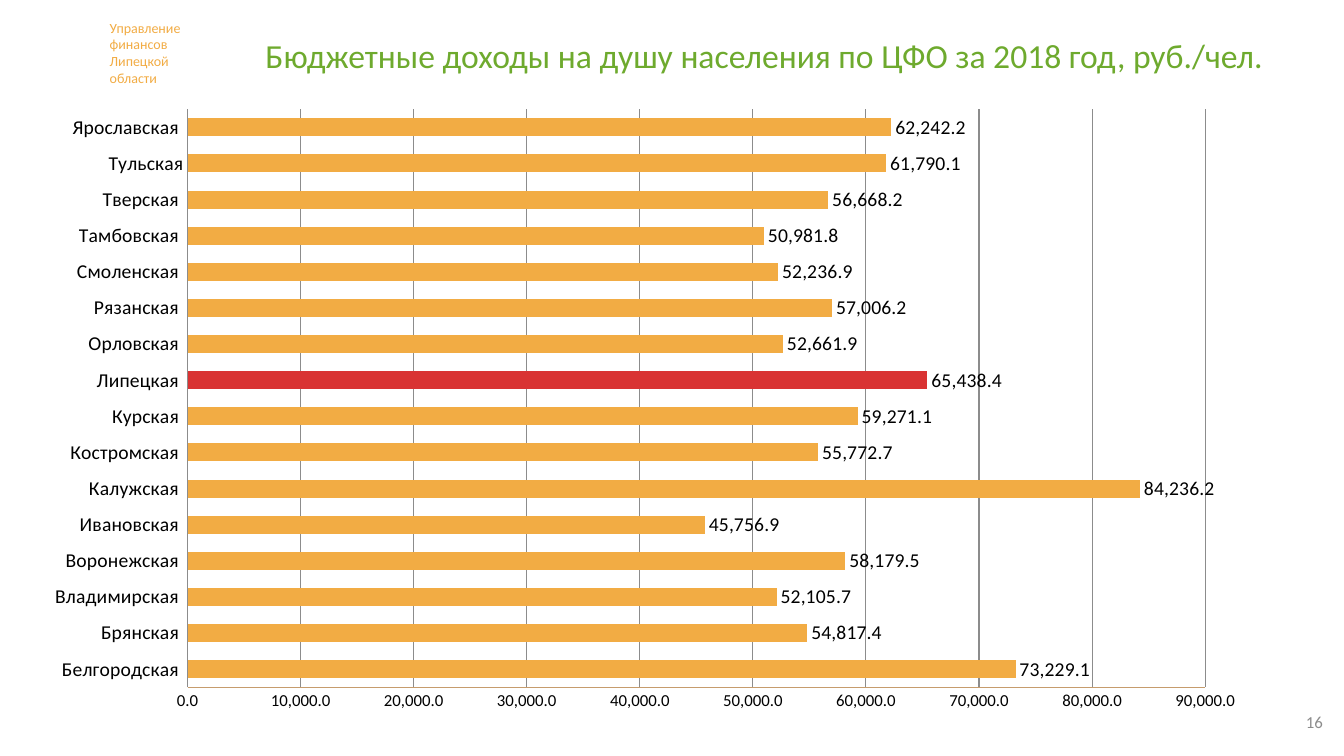
from dataclasses import dataclass

from lxml.etree import SubElement
from pptx import Presentation
from pptx.chart.data import CategoryChartData
from pptx.dml.color import RGBColor
from pptx.enum.chart import XL_CHART_TYPE, XL_LABEL_POSITION, XL_TICK_MARK
from pptx.enum.text import MSO_ANCHOR, PP_ALIGN
from pptx.oxml.ns import qn
from pptx.slide import Slide
from pptx.util import Emu, Pt

EMU_PER_PX = 9144  # 100 px to the inch


@dataclass(frozen=True)
class Theme:
    font: str = "Calibri"
    orange: str = "F2AC44"
    green: str = "6EAA2E"
    red: str = "D93333"
    black: str = "000000"
    grey: str = "8C8C8C"
    axis_brown: str = "C69C6D"
    caption_size: int = 10
    small_size: int = 12
    label_size: int = 14
    title_size: int = 24


@dataclass(frozen=True)
class Box:
    left: int
    top: int
    width: int
    height: int

    def emu(self) -> tuple[Emu, ...]:
        sides = (self.left, self.top, self.width, self.height)
        return tuple(Emu(side * EMU_PER_PX) for side in sides)


@dataclass(frozen=True)
class Region:
    name: str
    income: float


THEME = Theme()
HIGHLIGHTED = "Липецкая "
NUMBER_FORMAT = "#,##0.0"
REGIONS = [
    Region("Белгородская ", 73229.1),
    Region("Брянская ", 54817.4),
    Region("Владимирская ", 52105.7),
    Region("Воронежская ", 58179.5),
    Region("Ивановская ", 45756.9),
    Region("Калужская ", 84236.2),
    Region("Костромская ", 55772.7),
    Region("Курская ", 59271.1),
    Region(HIGHLIGHTED, 65438.4),
    Region("Орловская ", 52661.9),
    Region("Рязанская ", 57006.2),
    Region("Смоленская ", 52236.9),
    Region("Тамбовская ", 50981.8),
    Region("Тверская ", 56668.2),
    Region("Тульская", 61790.1),
    Region("Ярославская ", 62242.2),
]


def add_text(slide: Slide, box: Box, text: str, *, size: int, color: str,
             align=PP_ALIGN.LEFT, anchor=MSO_ANCHOR.TOP, line_spacing: float = 1.0) -> None:
    frame = slide.shapes.add_textbox(*box.emu()).text_frame
    frame.word_wrap = True
    frame.vertical_anchor = anchor
    paragraph = frame.paragraphs[0]
    paragraph.alignment = align
    paragraph.line_spacing = line_spacing
    run = paragraph.add_run()
    run.text = text
    style_font(run.font, size, color)


def style_font(font, size: int, color: str) -> None:
    font.name = THEME.font
    font.size = Pt(size)
    font.color.rgb = RGBColor.from_string(color)


def style_line(line, color: str) -> None:
    line.color.rgb = RGBColor.from_string(color)
    line.width = Pt(0.75)


def style_fill(fill, color: str) -> None:
    fill.solid()
    fill.fore_color.rgb = RGBColor.from_string(color)


def place_plot(chart, x: float, y: float, width: float, height: float) -> None:
    """Fix the inner plot area, in fractions of the chart."""
    plot_area = chart.plots[0]._element.getparent()
    for old_layout in plot_area.findall(qn("c:layout")):
        plot_area.remove(old_layout)
    layout = SubElement(plot_area, qn("c:layout"))
    plot_area.insert(0, layout)
    manual = SubElement(layout, qn("c:manualLayout"))
    settings = {"layoutTarget": "inner", "xMode": "edge", "yMode": "edge",
                "x": x, "y": y, "w": width, "h": height}
    for tag, value in settings.items():
        SubElement(manual, qn(f"c:{tag}")).set("val", str(value))


def add_income_chart(slide: Slide, box: Box, regions: list[Region]) -> None:
    data = CategoryChartData(number_format=NUMBER_FORMAT)
    data.categories = [region.name for region in regions]
    data.add_series("Series 1", [region.income for region in regions])
    chart = slide.shapes.add_chart(XL_CHART_TYPE.BAR_CLUSTERED, *box.emu(), data).chart
    chart.has_legend = False
    chart.has_title = False
    style_font(chart.font, THEME.label_size, THEME.black)
    place_plot(chart, 0.128, 0.02, 0.828, 0.922)

    # Bars
    plot = chart.plots[0]
    plot.gap_width = 100
    plot.vary_by_categories = False
    series = plot.series[0]
    series.invert_if_negative = False
    style_fill(series.format.fill, THEME.orange)
    for index, region in enumerate(regions):
        if region.name == HIGHLIGHTED:
            style_fill(series.points[index].format.fill, THEME.red)

    # Value labels
    labels = series.data_labels
    labels.show_value = True
    labels.number_format = NUMBER_FORMAT
    labels.number_format_is_linked = False
    labels.position = XL_LABEL_POSITION.OUTSIDE_END
    style_font(labels.font, THEME.label_size, THEME.black)

    # Axes
    axis_styles = [(chart.category_axis, THEME.label_size, THEME.grey),
                   (chart.value_axis, THEME.small_size, THEME.axis_brown)]
    for axis, size, line_color in axis_styles:
        axis.major_tick_mark = XL_TICK_MARK.NONE
        axis.minor_tick_mark = XL_TICK_MARK.NONE
        style_font(axis.tick_labels.font, size, THEME.black)
        style_line(axis.format.line, line_color)
    value_axis = chart.value_axis
    value_axis.minimum_scale = 0
    value_axis.maximum_scale = 90000
    value_axis.major_unit = 10000
    value_axis.has_major_gridlines = True
    style_line(value_axis.major_gridlines.format.line, THEME.grey)
    value_axis.tick_labels.number_format = NUMBER_FORMAT
    value_axis.tick_labels.number_format_is_linked = False


def main() -> None:
    presentation = Presentation()
    presentation.slide_width = Emu(1333 * EMU_PER_PX)
    presentation.slide_height = Emu(750 * EMU_PER_PX)
    slide = presentation.slides.add_slide(presentation.slide_layouts[6])

    # Header
    add_text(slide, Box(99, 14, 97, 77), "Управление финансов Липецкой области",
             size=THEME.caption_size, color=THEME.orange)
    add_text(slide, Box(210, 25, 1096, 64),
             "Бюджетные доходы на душу населения по ЦФО за 2018 год, руб./чел.",
             size=THEME.title_size, color=THEME.green, align=PP_ALIGN.CENTER,
             anchor=MSO_ANCHOR.MIDDLE, line_spacing=0.9)

    # Income by region
    add_income_chart(slide, Box(30, 96, 1219, 622), REGIONS)

    # Page number
    add_text(slide, Box(1011, 696, 311, 40), "16", size=THEME.small_size,
             color=THEME.grey, align=PP_ALIGN.RIGHT, anchor=MSO_ANCHOR.MIDDLE)

    presentation.save("out.pptx")


if __name__ == "__main__":
    main()
